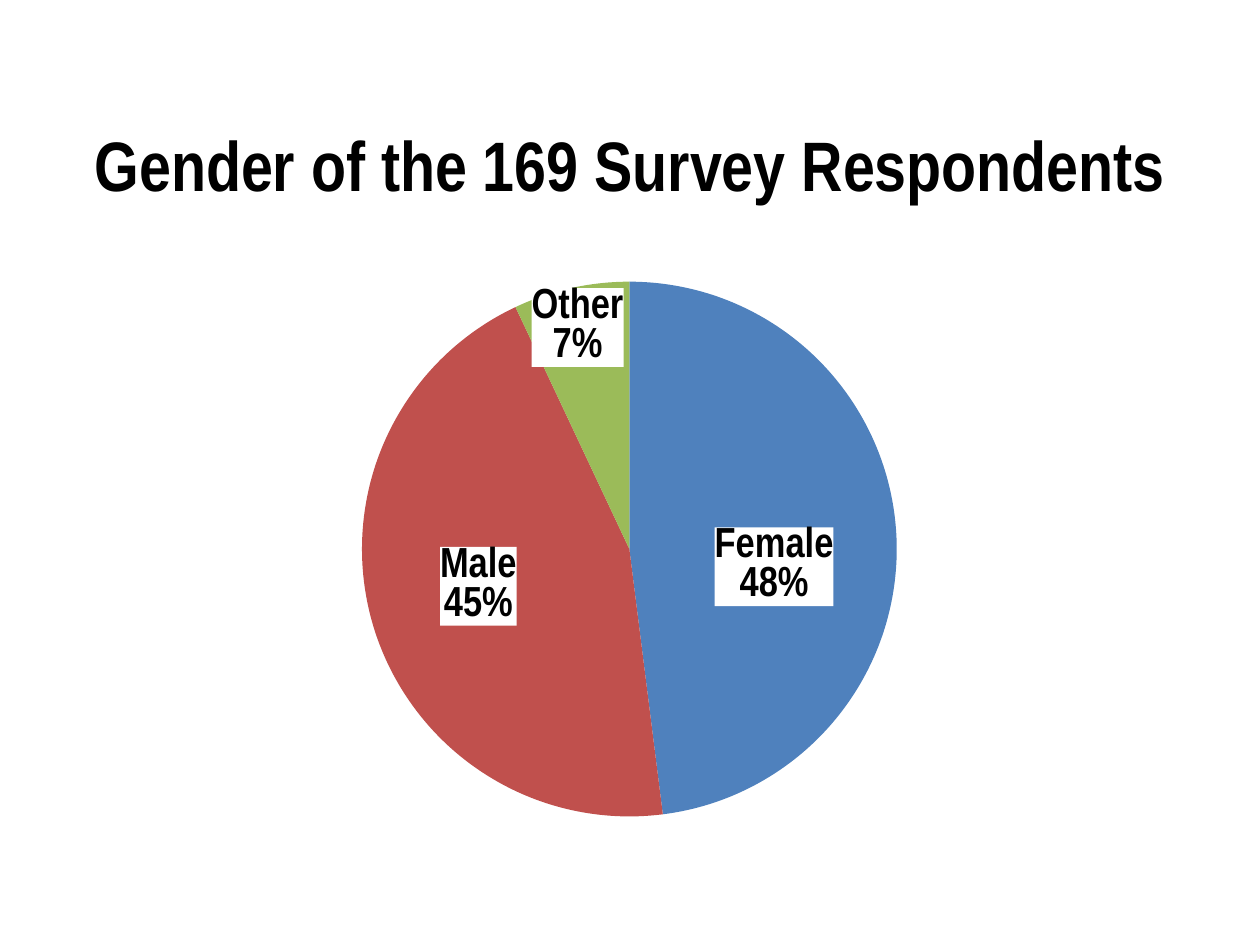
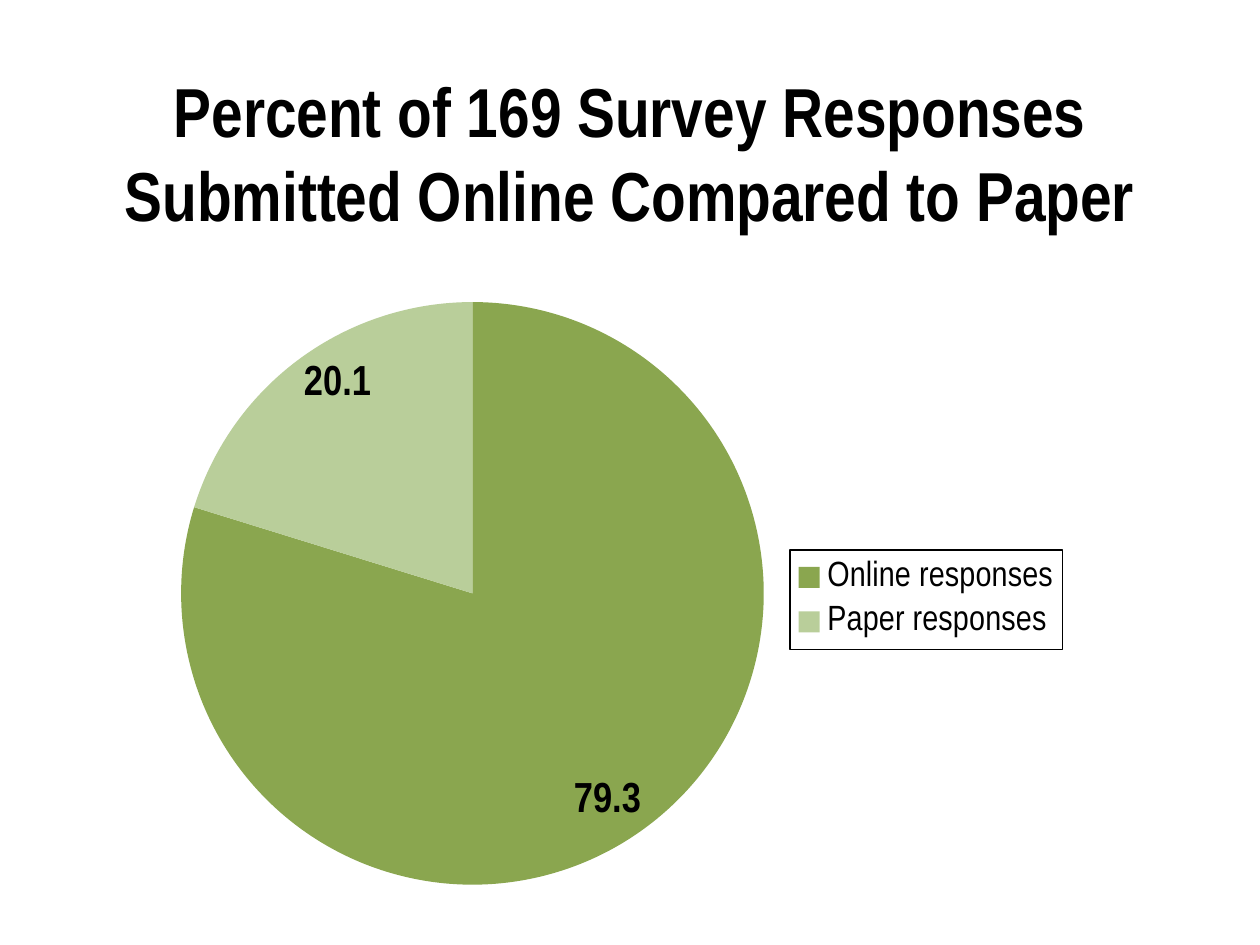
from pptx import Presentation
from pptx import util as u
from pptx.chart.data import CategoryChartData
from pptx.dml.color import RGBColor
from pptx.enum import chart as ch, text
from pptx.oxml import parse_xml
from pptx.oxml.ns import nsdecls, qn

COLOURS = {"ink": "000000", "label": "FFFFFF",
           "female": "4F81BD", "male": "C0504D", "other": "9BBB59",
           "online": "8AA64F", "paper": "B9CE9A"}
FONT = "Arial Narrow"


def style_font(font, size, bold):
    look = {"name": FONT, "size": u.Pt(size), "bold": bold}
    for attribute, value in look.items():
        setattr(font, attribute, value)
    font.color.rgb = RGBColor.from_string(COLOURS["ink"])


def manual_layout(x, y, w=None, h=None, inner=False):
    """Chart layout in fractions; without a size, x and y are offsets."""
    parts = '<c:layoutTarget val="inner"/>' if inner else ""
    if w:
        parts += '<c:xMode val="edge"/><c:yMode val="edge"/>'
    for tag, value in zip("xywh", (x, y, w, h)):
        if value is not None:
            parts += f'<c:{tag} val="{value}"/>'
    return parse_xml(f'<c:layout {nsdecls("c")}><c:manualLayout>{parts}'
                     '</c:manualLayout></c:layout>')


surveys = [
    {"title": "Gender of the 169 Survey Respondents", "title_size": 40,
     "title_top": 0.67, "chart_at": (0.5, 1.75, 9, 5.17),
     "shares": {"Female": 48, "Male": 45, "Other": 7},
     "slices": ("female", "male", "other"), "number_format": "0",
     "plot": (0.26, 0.1, 0.47, 0.8),
     "label_offsets": [(0.01, 0.04), (-0.02, 0), (-0.02, -0.14)]},
    {"title": "Percent of 169 Survey Responses Submitted Online Compared to Paper",
     "title_size": 39.6, "title_top": 0.58, "chart_at": (0.42, 2.25, 9, 4.92),
     "shares": {"Online responses": 79.3, "Paper responses": 20.1},
     "slices": ("online", "paper"), "number_format": "0.0",
     "plot": (0.11, 0.03, 0.52, 0.94), "legend": (0.65, 0.43, 0.24, 0.16)},
]
# The gender pie fills the plot area given by its own layout
surveys[0]["plot"] = (0.235, 0.094, 0.529, 0.821)

deck = Presentation()
deck.slide_width, deck.slide_height = u.Inches(10), u.Inches(7.5)

for survey in surveys:
    slide = deck.slides.add_slide(deck.slide_layouts[5])

    # Title
    heading = slide.shapes.title
    heading.left, heading.top = u.Inches(0.5), u.Inches(survey["title_top"])
    heading.width, heading.height = u.Inches(9), u.Inches(1.25)
    frame = heading.text_frame
    frame.text = survey["title"]
    for attribute, value in {"auto_size": text.MSO_AUTO_SIZE.NONE, "word_wrap": True,
                             "vertical_anchor": text.MSO_ANCHOR.MIDDLE}.items():
        setattr(frame, attribute, value)
    frame.paragraphs[0].alignment = text.PP_ALIGN.CENTER
    style_font(frame.paragraphs[0].runs[0].font, survey["title_size"], True)

    # Pie
    data = CategoryChartData(number_format=survey["number_format"])
    data.categories = list(survey["shares"])
    data.add_series("Series 1", list(survey["shares"].values()))
    pie = slide.shapes.add_chart(
        ch.XL_CHART_TYPE.PIE, *map(u.Inches, survey["chart_at"]), data).chart
    pie.has_title = False
    pie.has_legend = "legend" in survey
    style_font(pie.font, 18, False)
    plot = pie.plots[0]
    plot.vary_by_categories = True
    plot_area = pie.element.find(".//" + qn("c:plotArea"))
    for automatic in plot_area.findall(qn("c:layout")):
        plot_area.remove(automatic)
    plot_area.insert(0, manual_layout(*survey["plot"], inner=True))

    responses = plot.series[0]
    for index, name in enumerate(survey["slices"]):
        fill = responses.points[index].format.fill
        fill.solid()
        fill.fore_color.rgb = RGBColor.from_string(COLOURS[name])

    # Slice labels
    labels = responses.data_labels
    style_font(labels.font, 24, True)
    by_share = "label_offsets" in survey
    position = ch.XL_LABEL_POSITION
    for attribute, value in {
            "show_value": not by_share, "show_percentage": by_share,
            "show_category_name": by_share,
            "position": position.CENTER if by_share else position.INSIDE_END}.items():
        setattr(labels, attribute, value)

    # White label boxes, each moved from the middle of its slice
    for index, offset in enumerate(survey.get("label_offsets", [])):
        label = responses.points[index].data_label
        style_font(label.font, 24, True)
        label.position = position.CENTER
        box = responses.points[index].data_label.font and \
            labels._element.findall(qn("c:dLbl"))[index]
        box.insert(1, manual_layout(*offset))
        box.find(qn("c:txPr")).addprevious(parse_xml(
            f'<c:spPr {nsdecls("c", "a")}><a:solidFill><a:srgbClr '
            f'val="{COLOURS["label"]}"/></a:solidFill></c:spPr>'))
        for tag, shown in {"showVal": 0, "showCatName": 1, "showPercent": 1}.items():
            box.find(qn("c:" + tag)).set("val", str(shown))
        box.append(parse_xml(f'<c:separator {nsdecls("c")}>\n</c:separator>'))

    # Legend
    if pie.has_legend:
        key = pie.legend
        key.position = ch.XL_LEGEND_POSITION.RIGHT
        key.include_in_layout = False
        style_font(key.font, 20, False)
        for automatic in key._element.findall(qn("c:layout")):
            key._element.remove(automatic)
        key._element.find(qn("c:legendPos")).addnext(manual_layout(*survey["legend"]))
        key._element.find(qn("c:txPr")).addprevious(parse_xml(
            f'<c:spPr {nsdecls("c", "a")}><a:ln w="9525"><a:solidFill><a:srgbClr '
            f'val="{COLOURS["ink"]}"/></a:solidFill></a:ln></c:spPr>'))

deck.save("out.pptx")
